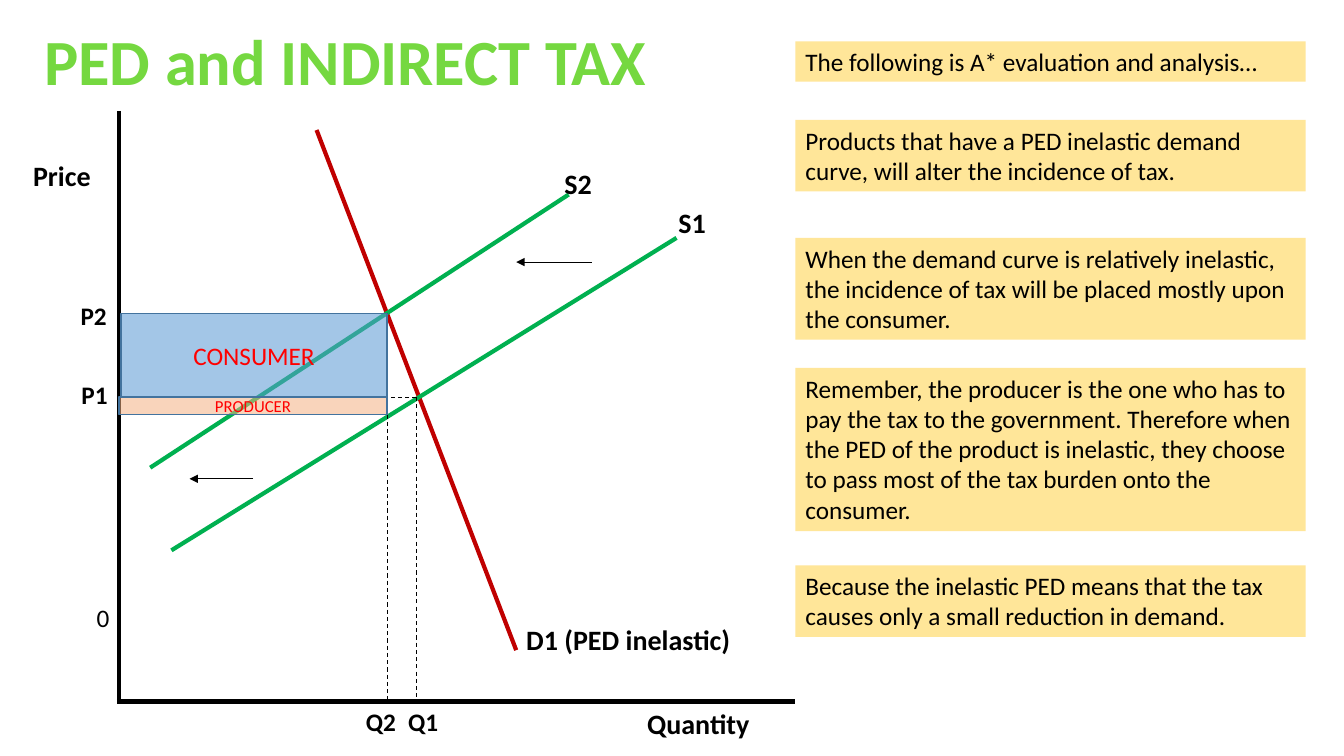
"""Build the slide on price elasticity of demand and the incidence of an indirect tax."""
from lxml.etree import SubElement
from pptx import Presentation
from pptx.dml.color import RGBColor
from pptx.enum.dml import MSO_LINE
from pptx.enum.shapes import MSO_CONNECTOR, MSO_SHAPE
from pptx.enum.text import MSO_ANCHOR, MSO_AUTO_SIZE, PP_ALIGN
from pptx.oxml.ns import qn
from pptx.util import Inches, Pt


def color(hex_value):
    return RGBColor.from_string(hex_value)


def write(shape, text, size, hex_value="000000", bold=False,
          align=PP_ALIGN.LEFT, anchor=MSO_ANCHOR.TOP, fit=MSO_AUTO_SIZE.SHAPE_TO_FIT_TEXT):
    frame = shape.text_frame
    frame.text = text
    frame.word_wrap = True
    frame.auto_size = fit
    frame.vertical_anchor = anchor
    paragraph = frame.paragraphs[0]
    paragraph.alignment = align
    font = paragraph.runs[0].font
    font.name = "Calibri"
    font.size = Pt(size)
    font.bold = bold
    font.color.rgb = color(hex_value)


deck = Presentation()
deck.slide_width = Inches(13.33)
deck.slide_height = Inches(7.5)
slide = deck.slides.add_slide(deck.slide_layouts[5])
shapes = slide.shapes

title = shapes.title
title.left, title.top = Inches(0.34), Inches(0.16)
title.width, title.height = Inches(11.77), Inches(0.88)
write(title, "PED and INDIRECT TAX", 46, "75D840", bold=True)

origin_x, axis_y = 1.18, 6.96
p2_y, p1_y, producer_y = 3.11, 3.94, 4.11
q2_x, q1_x = 3.84, 4.13

graph_lines = [
    (origin_x, 1.1, origin_x, axis_y, "000000", 3, None, False),
    (1.16, axis_y, 7.89, axis_y, "000000", 3, None, False),
    (3.14, 1.29, 5.12, 6.45, "C00000", 3, None, False),
    (1.7, 5.46, 6.71, 2.36, "00B050", 3, None, False),
    (5.64, 1.93, 1.49, 4.64, "00B050", 3, None, False),
    (q1_x, p1_y, 1.22, p1_y, "000000", 0.75, MSO_LINE.DASH, False),
    (q1_x, p1_y, q1_x, axis_y, "000000", 0.75, MSO_LINE.DASH, False),
    (q2_x, p2_y, q2_x, axis_y, "000000", 0.75, MSO_LINE.DASH, False),
    (q2_x, p2_y, 1.22, p2_y, "000000", 0.75, MSO_LINE.DASH_DOT, False),
    (q2_x, producer_y, origin_x, producer_y, "000000", 0.75, MSO_LINE.DASH_DOT, False),
    (5.87, 2.6, 5.12, 2.6, "000000", 0.75, None, True),
    (2.51, 4.75, 1.88, 4.75, "000000", 0.75, None, True),
]
for x1, y1, x2, y2, hex_value, weight, dash, is_shift_arrow in graph_lines:
    segment = shapes.add_connector(
        MSO_CONNECTOR.STRAIGHT, Inches(x1), Inches(y1), Inches(x2), Inches(y2))
    segment.line.color.rgb = color(hex_value)
    segment.line.width = Pt(weight)
    if dash:
        segment.line.dash_style = dash
    properties = segment._element.spPr
    if is_shift_arrow:
        SubElement(properties.find(qn("a:ln")), qn("a:tailEnd"), type="triangle")
    SubElement(properties, qn("a:effectLst"))

graph_labels = [
    ("Price", 0.23, 1.52, 1.47, 20, True),
    ("Quantity", 6.32, axis_y, 1.58, 20, True),
    ("D1 (PED inelastic)", 5.12, 6.13, 2.46, 20, True),
    ("S1", 6.63, 1.99, 1.26, 20, True),
    ("S2", 5.5, 1.6, 0.84, 20, True),
    ("P1", 0.71, 3.71, 0.52, 18, True),
    ("P2", 0.7, 2.93, 0.58, 18, True),
    ("Q1", 3.95, axis_y, 0.74, 18, True),
    ("Q2", 3.53, axis_y, 0.74, 18, True),
    ("0", 0.86, 5.93, 1.16, 18, False),
]
for text, left, top, width, size, bold in graph_labels:
    label = shapes.add_textbox(
        Inches(left), Inches(top), Inches(width), Inches(0.44 if size == 20 else 0.4))
    write(label, text, size, bold=bold)

tax_burdens = [
    ("PRODUCER", origin_x, p1_y, producer_y, 12, "F4B183", 54),
    ("CONSUMER", 1.2, p2_y, p1_y, 18, "5B9BD5", 56),
]
for text, left, top, bottom, size, fill, opacity in tax_burdens:
    burden = shapes.add_shape(
        MSO_SHAPE.RECTANGLE, Inches(left), Inches(top),
        Inches(q2_x - left), Inches(bottom - top))
    burden.shadow.inherit = False
    burden.fill.solid()
    burden.fill.fore_color.rgb = color(fill)
    fill_color = burden._element.spPr.find(qn("a:solidFill")).find(qn("a:srgbClr"))
    SubElement(fill_color, qn("a:alpha"), val=str(opacity * 1000))
    burden.line.color.rgb = color("43739E")
    burden.line.width = Pt(1)
    write(burden, text, size, "FF0000", align=PP_ALIGN.CENTER,
          anchor=MSO_ANCHOR.MIDDLE, fit=MSO_AUTO_SIZE.NONE)

evaluation_notes = [
    (0.41, 0.4, "The following is A* evaluation and analysis…"),
    (1.19, 0.71, "Products that have a PED inelastic demand curve, will alter the "
                 "incidence of tax."),
    (2.36, 1.01, "When the demand curve is relatively inelastic, the incidence of tax "
                 "will be placed mostly upon the consumer."),
    (3.65, 1.62, "Remember, the producer is the one who has to pay the tax to the "
                 "government. Therefore when the PED of the product is inelastic, they "
                 "choose to pass most of the tax burden onto the consumer."),
    (5.61, 0.71, "Because the inelastic PED means that the tax causes only a small "
                 "reduction in demand."),
]
for top, height, text in evaluation_notes:
    note = shapes.add_shape(
        MSO_SHAPE.RECTANGLE, Inches(7.89), Inches(top), Inches(5.06), Inches(height))
    note.shadow.inherit = False
    note.fill.solid()
    note.fill.fore_color.rgb = color("FFE699")
    note.line.fill.background()
    write(note, text, 18)

deck.save("out.pptx")
